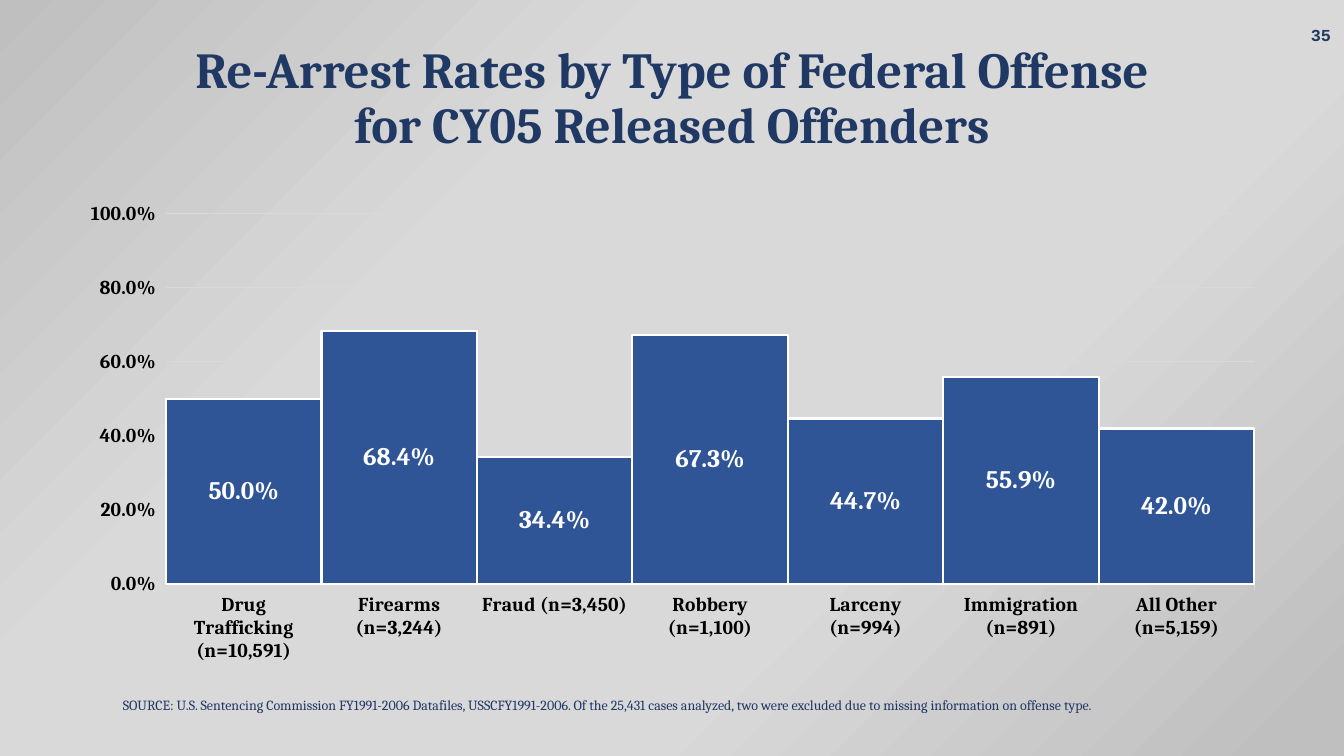
from lxml.etree import SubElement
from pptx import Presentation
from pptx.chart.data import CategoryChartData
from pptx.dml.color import RGBColor
from pptx.enum.chart import XL_CHART_TYPE, XL_LABEL_POSITION, XL_TICK_MARK
from pptx.enum.text import MSO_ANCHOR, MSO_AUTO_SIZE, PP_ALIGN
from pptx.oxml import parse_xml
from pptx.oxml.ns import nsdecls, qn
from pptx.util import Inches, Pt

SLIDE_WIDTH, SLIDE_HEIGHT = Inches(13.33), Inches(7.5)
COLORS = {
    "navy": "203864",
    "bar": "2F5597",
    "white": "FFFFFF",
    "black": "000000",
    "light": "D9D9D9",
    "shade": "BFBFBF",
}
BACKDROP_STOPS = [(0, "shade"), (33, "light"), (66, "light"), (97, "shade")]
REARREST_RATES = {
    "Drug Trafficking (n=10,591)": 0.5,
    "Firearms (n=3,244)": 0.684,
    "Fraud (n=3,450)": 0.344,
    "Robbery (n=1,100)": 0.673,
    "Larceny (n=994)": 0.447,
    "Immigration (n=891)": 0.559,
    "All Other (n=5,159)": 0.42,
}
PLOT_PERCENT = {"x": 8.21, "y": 4.27, "w": 89.8, "h": 77.1}


def rgb(name):
    return RGBColor.from_string(COLORS[name])


def area(left, top, width, height):
    return (
        round(SLIDE_WIDTH * left / 100),
        round(SLIDE_HEIGHT * top / 100),
        round(SLIDE_WIDTH * width / 100),
        round(SLIDE_HEIGHT * height / 100),
    )


def style_font(font, size, color, bold=True, face="Cambria"):
    font.name, font.size, font.bold = face, Pt(size), bold
    font.color.rgb = rgb(color)


def style_line(line, color, width):
    line.color.rgb = rgb(color)
    line.width = Pt(width)


def paint_backdrop(slide):
    stops = "".join(
        f'<a:gs pos="{position * 1000}"><a:srgbClr val="{COLORS[color]}"/></a:gs>'
        for position, color in BACKDROP_STOPS
    )
    gradient = parse_xml(
        f'<a:gradFill {nsdecls("a")} rotWithShape="1"><a:gsLst>{stops}</a:gsLst>'
        '<a:path path="circle"><a:fillToRect r="100000" b="100000"/></a:path>'
        "</a:gradFill>"
    )
    slide.background.fill.solid()
    solid = slide.element.find(".//" + qn("p:bgPr")).find(qn("a:solidFill"))
    solid.getparent().replace(solid, gradient)


def write_lines(frame, lines, size, align, anchor=MSO_ANCHOR.TOP,
                spacing=0.9, **font_style):
    frame.word_wrap = True
    frame.auto_size = MSO_AUTO_SIZE.NONE
    frame.vertical_anchor = anchor
    paragraph = frame.paragraphs[0]
    paragraph.alignment = align
    paragraph.line_spacing = spacing
    for index, line in enumerate(lines):
        if index:
            paragraph.add_line_break()
        run = paragraph.add_run()
        run.text = line
        style_font(run.font, size, "navy", **font_style)


def add_title(slide, bounds, lines):
    title = slide.shapes.title
    title.left, title.top, title.width, title.height = bounds
    write_lines(title.text_frame, lines, 36, PP_ALIGN.CENTER)


def add_note(slide, bounds, text, size, align, **style):
    note = slide.shapes.add_textbox(*bounds)
    write_lines(note.text_frame, [text], size, align, **style)


def place_plot(chart):
    plot_area = chart.element.find(".//" + qn("c:plotArea"))
    layout = plot_area.find(qn("c:layout"))
    if layout is None:
        layout = parse_xml(f'<c:layout {nsdecls("c")}/>')
        plot_area.insert(0, layout)
    manual = SubElement(layout, qn("c:manualLayout"))
    settings = {"layoutTarget": "inner", "xMode": "edge", "yMode": "edge"}
    settings.update({key: str(share / 100) for key, share in PLOT_PERCENT.items()})
    for tag, value in settings.items():
        SubElement(manual, qn(f"c:{tag}")).set("val", value)


def style_axes(chart):
    offenses, rates = chart.category_axis, chart.value_axis
    for axis in (offenses, rates):
        axis.major_tick_mark = XL_TICK_MARK.OUTSIDE
        axis.minor_tick_mark = XL_TICK_MARK.NONE
        style_font(axis.tick_labels.font, 14, "black")
    offenses.has_major_gridlines = False
    style_line(offenses.format.line, "light", 0.75)
    rates.minimum_scale, rates.maximum_scale, rates.major_unit = 0, 1, 0.2
    rates.tick_labels.number_format = "0.0%"
    rates.tick_labels.number_format_is_linked = False
    rates.format.line.fill.background()
    style_line(rates.major_gridlines.format.line, "light", 0.75)


def style_bars(plot):
    plot.gap_width = 0
    plot.vary_by_categories = False
    bars = plot.series[0]
    bars.invert_if_negative = False
    bars.format.fill.solid()
    bars.format.fill.fore_color.rgb = rgb("bar")
    style_line(bars.format.line, "white", 1.5)
    labels = bars.data_labels
    labels.show_value = True
    labels.position = XL_LABEL_POSITION.CENTER
    labels.number_format = "0.0%"
    labels.number_format_is_linked = False
    style_font(labels.font, 18, "white")


def add_rate_chart(slide, bounds):
    data = CategoryChartData(number_format="0.0%")
    data.categories = list(REARREST_RATES)
    data.add_series("Series 1", list(REARREST_RATES.values()))
    chart = slide.shapes.add_chart(
        XL_CHART_TYPE.COLUMN_CLUSTERED, *bounds, data
    ).chart
    chart.has_legend = False
    chart.has_title = False
    style_font(chart.font, 10, "black", bold=False)
    place_plot(chart)
    style_axes(chart)
    style_bars(chart.plots[0])


def main():
    deck = Presentation()
    deck.slide_width, deck.slide_height = SLIDE_WIDTH, SLIDE_HEIGHT
    slide = deck.slides.add_slide(deck.slide_layouts.get_by_name("Title Only"))
    paint_backdrop(slide)
    add_note(slide, area(77.27, 2, 22.5, 5.33), "35", 12, PP_ALIGN.RIGHT,
             anchor=MSO_ANCHOR.MIDDLE, spacing=1.0, face="Courier New")
    add_rate_chart(slide, area(4.95, 25.6, 90.17, 63.47))
    add_title(slide, area(0, 5.33, 100, 17.6), [
        "Re-Arrest Rates by Type of Federal Offense",
        "for CY05 Released Offenders",
    ])
    add_note(
        slide, area(8.4, 91.73, 83.27, 10),
        "SOURCE: U.S. Sentencing Commission FY1991-2006 Datafiles, "
        "USSCFY1991-2006. Of the 25,431 cases analyzed, two were excluded "
        "due to missing information on offense type.",
        10, PP_ALIGN.LEFT, bold=False,
    )
    deck.save("out.pptx")


if __name__ == "__main__":
    main()
